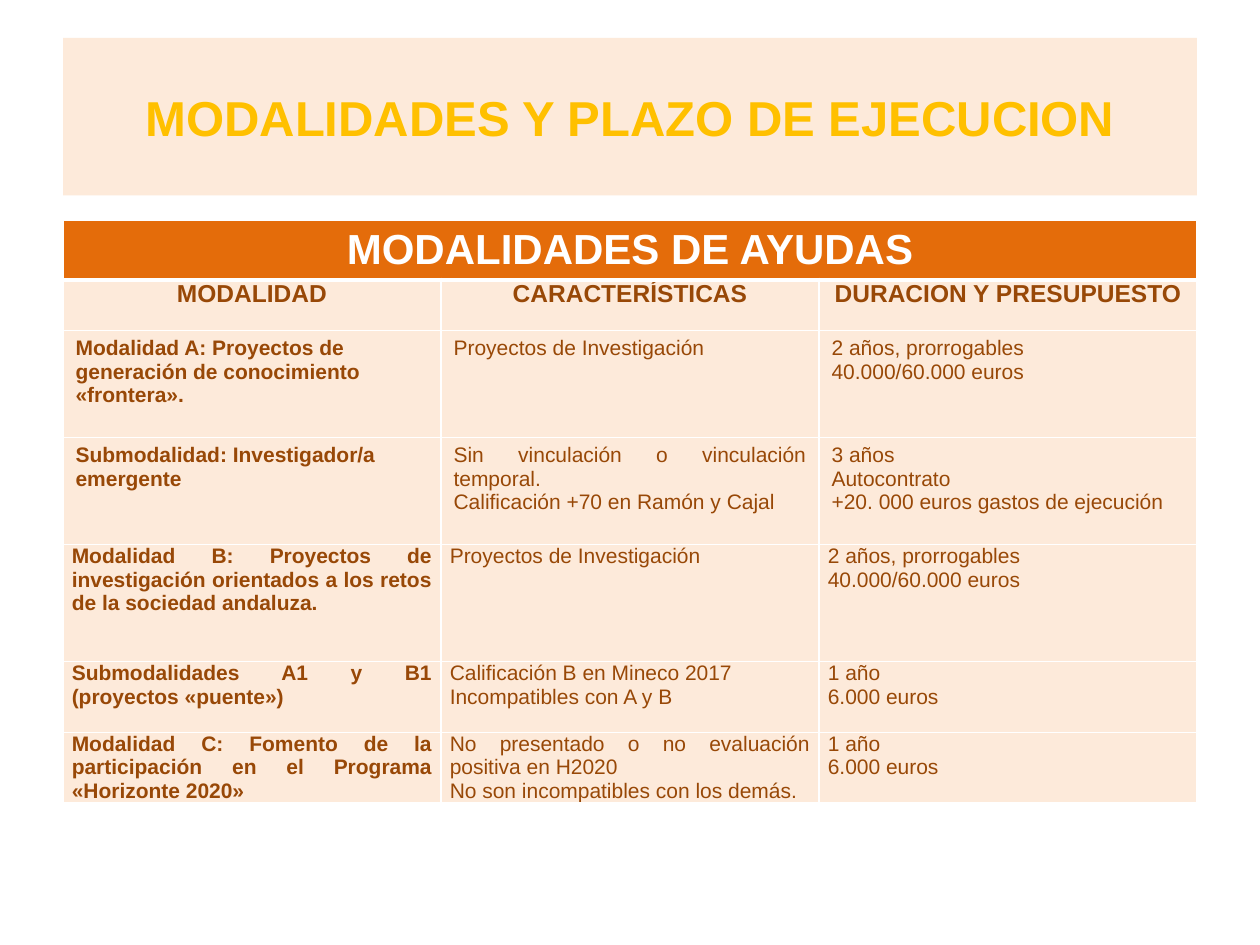
"""Build the slide on grant types, their features, duration and budget."""
from lxml.etree import SubElement
from pptx import Presentation
from pptx.dml.color import RGBColor
from pptx.enum.text import MSO_ANCHOR, PP_ALIGN
from pptx.oxml.ns import qn
from pptx.util import Inches, Pt

PEACH = RGBColor(0xFD, 0xEA, 0xDA)
ORANGE = RGBColor(0xE4, 0x6C, 0x0A)
BROWN = RGBColor(0x98, 0x48, 0x07)
GOLD = RGBColor(0xFF, 0xC0, 0x00)
WHITE = RGBColor(0xFF, 0xFF, 0xFF)

FUNDING = "2 años, prorrogables\n40.000/60.000 euros"
BRIDGE = "1 año\n6.000 euros"
ROWS = [
    ("MODALIDADES DE AYUDAS", "", ""),
    ("MODALIDAD", "CARACTERÍSTICAS", "DURACION Y PRESUPUESTO"),
    ("Modalidad A: Proyectos de generación de conocimiento «frontera».",
     "Proyectos de Investigación", FUNDING),
    ("Submodalidad: Investigador/a emergente",
     "Sin vinculación o vinculación temporal.\nCalificación +70 en Ramón y Cajal",
     "3 años\nAutocontrato\n+20. 000 euros gastos de ejecución"),
    ("Modalidad B: Proyectos de investigación orientados a los retos "
     "de la sociedad andaluza.", "Proyectos de Investigación", FUNDING),
    ("Submodalidades A1 y B1 (proyectos «puente»)",
     "Calificación B en Mineco 2017\nIncompatibles con A y B", BRIDGE),
    ("Modalidad C: Fomento de la participación en el Programa «Horizonte 2020»",
     "No presentado o no evaluación positiva en H2020\n"
     "No son incompatibles con los demás.", BRIDGE),
]
ROW_HEIGHTS = [0.47, 0.4, 0.85, 0.85, 0.93, 0.56, 0.56]
LEFT_ALIGNED = [(2, 0), (2, 1), (3, 0)]
ROOMY_ROWS = [0, 2, 3]


def format_text(frame, size, color, bold, align):
    for paragraph in frame.paragraphs:
        paragraph.alignment = align
        for span in paragraph.runs:
            span.font.name = "Arial"
            span.font.size = Pt(size)
            span.font.bold = bold
            span.font.color.rgb = color


def add_borders(cell, widths):
    properties = cell._tc.get_or_add_tcPr()
    for index, (side, width) in enumerate(widths.items()):
        line = SubElement(properties, qn(f"a:{side}"), w=str(Pt(width)))
        fill = SubElement(line, qn("a:solidFill"))
        SubElement(fill, qn("a:srgbClr"), val=str(WHITE))
        properties.insert(index, line)


deck = Presentation()
deck.slide_width, deck.slide_height = Inches(10), Inches(7.5)
page = deck.slides.add_slide(deck.slide_layouts[5])

title = page.shapes.title
title.left, title.top = Inches(0.5), Inches(0.3)
title.width, title.height = Inches(9), Inches(1.25)
title.fill.solid()
title.fill.fore_color.rgb = PEACH
title.text_frame.text = "MODALIDADES Y PLAZO DE EJECUCION"
title.text_frame.vertical_anchor = MSO_ANCHOR.MIDDLE
format_text(title.text_frame, 28, GOLD, True, PP_ALIGN.CENTER)

table = page.shapes.add_table(
    len(ROWS), 3, Inches(0.5), Inches(1.75), Inches(9), Inches(sum(ROW_HEIGHTS))
).table
for row, height in zip(table.rows, ROW_HEIGHTS):
    row.height = Inches(height)
table.cell(0, 0).merge(table.cell(0, 2))

for row_index, texts in enumerate(ROWS):
    for column, text in enumerate(texts):
        cell = table.cell(row_index, column)
        cell.fill.solid()
        cell.fill.fore_color.rgb = ORANGE if row_index == 0 else PEACH
        add_borders(cell, {"lnL": 1, "lnR": 1,
                           "lnT": 3 if row_index == 1 else 1,
                           "lnB": 3 if row_index == 0 else 1})
        if row_index not in ROOMY_ROWS:
            cell.margin_left = cell.margin_right = Inches(0.07)
            cell.margin_top = cell.margin_bottom = 0
        if not text:
            continue
        cell.text_frame.text = text
        if row_index == 0:
            format_text(cell.text_frame, 24, WHITE, True, PP_ALIGN.CENTER)
        elif row_index == 1:
            format_text(cell.text_frame, 14, BROWN, True, PP_ALIGN.CENTER)
        else:
            left = (row_index, column) in LEFT_ALIGNED
            align = PP_ALIGN.LEFT if left else PP_ALIGN.JUSTIFY
            format_text(cell.text_frame, 12, BROWN, column == 0, align)

deck.save("out.pptx")
